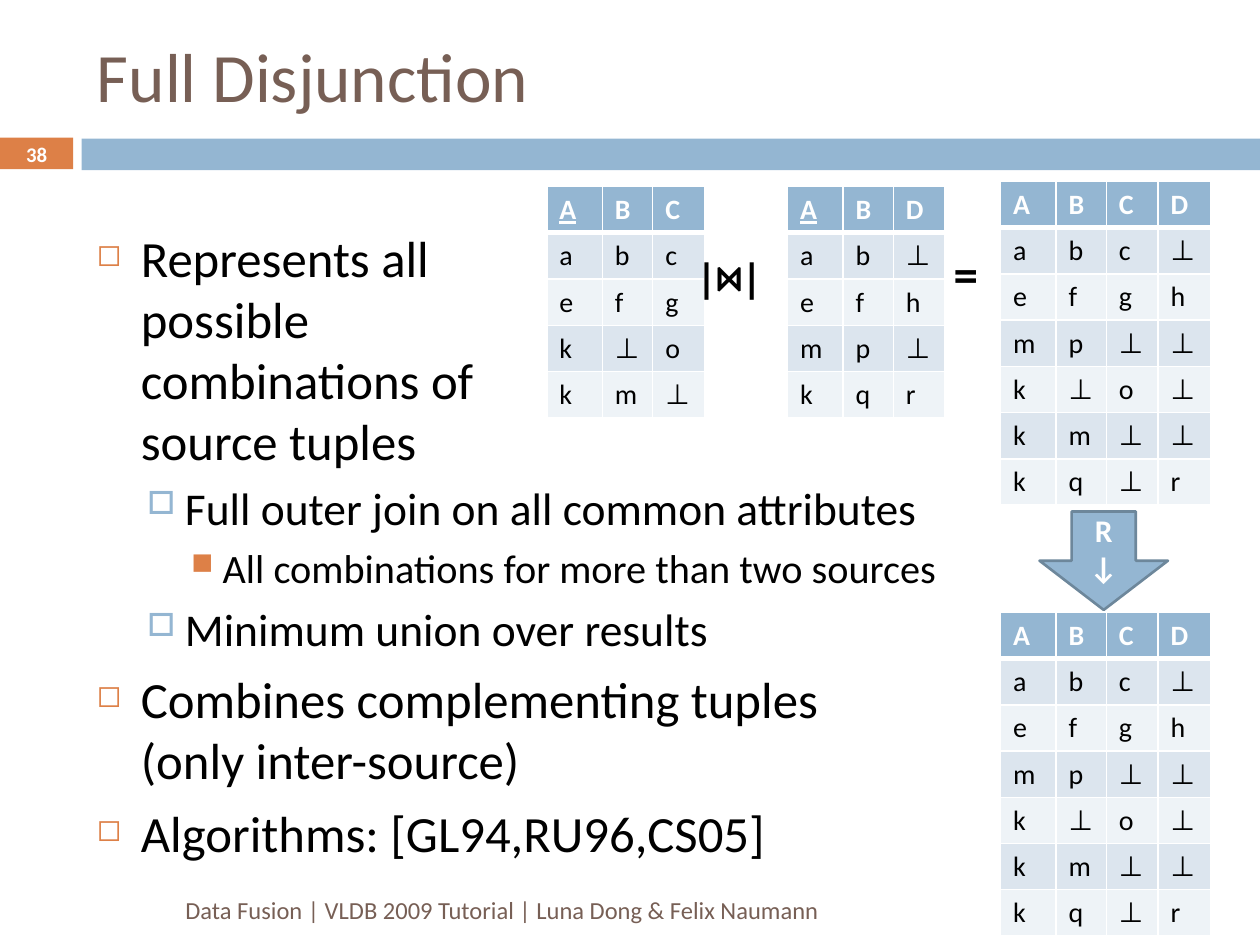
from lxml.etree import SubElement as Sub
from pptx import Presentation
from pptx.dml.color import RGBColor as RGB
from pptx.enum.shapes import MSO_SHAPE as Shape
from pptx.enum.text import MSO_ANCHOR as Anchor, MSO_AUTO_SIZE as Auto, PP_ALIGN as Align
from pptx.oxml.ns import qn
from pptx.util import Pt

HUES = {"bar": "94B6D2", "tab": "DD8047", "head": "775F55", "edge": "6D879B",
        "odd": "DCE5EE", "even": "EEF3F7", "white": "FFFFFF", "black": "000000"}
FACE = "Calibri"
WIDTHS = [31.7, 28.8, 29.5, 30.2]
ROW = 26.4
LEVELS = [dict(size=29, left=25.2, hang=21.6 + 3.6, gap=7, mark="◻", hue="tab", pct=60),
          dict(size=26, left=50.4, hang=21.6, gap=5.5, mark="□", hue="bar", pct=70),
          dict(size=23, left=72, hang=18, gap=5, mark="■", hue="tab", pct=75)]
POINTS = [(0, "Represents all\vpossible\vcombinations of\vsource tuples"),
          (1, "Full outer join on all common attributes"),
          (2, "All combinations for more than two sources"),
          (1, "Minimum union over results"),
          (0, "Combines complementing tuples\v(only inter-source)"),
          (0, "Algorithms: [GL94,RU96,CS05]")]
FIRST = ["A B C", "a b c", "e f g", "k ⊥ o", "k m ⊥"]
SECOND = ["A B D", "a b ⊥", "e f h", "m p ⊥", "k q r"]
RESULT = ["A B C D", "a b c ⊥", "e f g h", "m p ⊥ ⊥", "k ⊥ o ⊥", "k m ⊥ ⊥", "k q ⊥ r"]


def hue(name):
    """Return the named colour."""
    return RGB.from_string(HUES[name])


def style(font, size, name, bold=False):
    """Set face, size, colour and weight of a font."""
    font.name, font.size, font.bold = FACE, Pt(size), bold
    font.color.rgb = hue(name)


def block(slide, kind, box, fill, edge=None):
    """Draw a filled preset shape in the box."""
    shape = slide.shapes.add_shape(kind, *map(Pt, box))
    shape.shadow.inherit = False
    shape.fill.solid()
    shape.fill.fore_color.rgb = hue(fill)
    if edge:
        shape.line.color.rgb = hue(edge)
        shape.line.width = Pt(1.5)
    else:
        shape.line.fill.background()
    return shape


def label(slide, box, text, size, name, bold=False, align=Align.LEFT, wrap=True,
          anchor=Anchor.MIDDLE):
    """Place one line of text in the box and return its paragraph."""
    frame = slide.shapes.add_textbox(*map(Pt, box)).text_frame
    frame.word_wrap, frame.vertical_anchor = wrap, anchor
    para = frame.paragraphs[0]
    para.text, para.alignment = text, align
    style(para.font, size, name, bold)
    return para


def header(slide, left, top, width):
    """Place the title, the page tab and the colour bar."""
    title = slide.shapes.title
    title.left, title.top, title.width, title.height = map(
        Pt, (left + 48.2, top + 18, 642.2, 49.7))
    frame = title.text_frame
    frame.auto_size, frame.vertical_anchor = Auto.NONE, Anchor.MIDDLE
    para = frame.paragraphs[0]
    para.text, para.alignment = "Full Disjunction", Align.LEFT
    style(para.font, 39.6, "head")
    block(slide, Shape.RECTANGLE, (left, top + 78.7, 41.8, 18), "tab")
    block(slide, Shape.RECTANGLE, (left + 46.6, top + 79.2, width - 46.6, 18), "bar")
    label(slide, (left, top + 78.7, 41.8, 19.4), "38", 11.9, "white", True, Align.CENTER)


def outline(slide, box):
    """Write the bulleted points in the box."""
    frame = slide.shapes.add_textbox(*map(Pt, box)).text_frame
    frame.word_wrap = True
    for i, (level, text) in enumerate(POINTS):
        para = frame.add_paragraph() if i else frame.paragraphs[0]
        rule = LEVELS[level]
        para.text, para.level = text, level
        para.space_before = Pt(rule["gap"])
        style(para.font, rule["size"], "black")
        props = para._p.get_or_add_pPr()
        props.set("marL", str(Pt(rule["left"])))
        props.set("indent", str(-Pt(rule["hang"])))
        marks = [Sub(props, qn("a:buClr")),
                 Sub(props, qn("a:buSzPct"), val=str(rule["pct"] * 1000)),
                 Sub(props, qn("a:buChar"), char=rule["mark"])]
        Sub(marks[0], qn("a:srgbClr"), val=HUES[rule["hue"]])
        for mark in marks:
            props.find(qn("a:defRPr")).addprevious(mark)


def border(cell, head):
    """Give a cell white borders, thicker below the head row."""
    props = cell._tc.get_or_add_tcPr()
    for side in "LRTB":
        wide = 3 if head and side == "B" else 1
        line = Sub(props, qn("a:ln" + side), w=str(Pt(wide)))
        Sub(Sub(line, qn("a:solidFill")), qn("a:srgbClr"), val=HUES["white"])


def grid(slide, left, top, rows, key=False):
    """Build a relation from its rows, with its key underlined if asked."""
    data = [row.split() for row in rows]
    wide = WIDTHS[:len(data[0])]
    table = slide.shapes.add_table(len(data), len(wide), Pt(left), Pt(top),
                                   Pt(sum(wide)), Pt(ROW * len(data))).table
    for col, width in zip(table.columns, wide):
        col.width = Pt(width)
    for r, row in enumerate(data):
        for c, text in enumerate(row):
            cell = table.cell(r, c)
            border(cell, r == 0)
            cell.fill.solid()
            cell.fill.fore_color.rgb = hue("bar" if r == 0 else "odd" if r % 2 else "even")
            para = cell.text_frame.paragraphs[0]
            para.text = text
            style(para.font, 16, "black" if r else "white", r == 0)
            if key and r == c == 0:
                para.font.underline = True


def join(slide, left, top):
    """Show the join of two relations, its result and the reduced result."""
    grid(slide, left, top + 2.9, FIRST, True)
    grid(slide, left + 137.5, top + 2.9, SECOND, True)
    grid(slide, left + 259.2, top, RESULT)
    sign = label(slide, (left + 78.5, top + 36.7, 67, 36), "|", 24, "black", True,
                 wrap=False, anchor=Anchor.TOP)
    for text, face in (("⋈", "Courier New"), ("|", FACE)):
        run = sign.add_run()
        run.text, run.font.name = text, face
    label(slide, (left + 225.4, top + 31.7, 33.1, 41), "=", 28, "black", True,
          wrap=False, anchor=Anchor.TOP)
    arrow = block(slide, Shape.DOWN_ARROW, (left + 281.5, top + 188.6, 73.4, 56.2),
                  "bar", "edge")
    frame = arrow.text_frame
    frame.word_wrap, frame.vertical_anchor = True, Anchor.MIDDLE
    para = frame.paragraphs[0]
    para.text, para.alignment = "R↓", Align.CENTER
    style(para.font, 18, "white", True)
    grid(slide, left + 259.2, top + 246.2, RESULT)


def main():
    """Build the slide and save it."""
    deck = Presentation()
    deck.slide_width, deck.slide_height = Pt(720), Pt(540)
    slide = deck.slides.add_slide(deck.slide_layouts[5])
    header(slide, 0, 0, 720)
    outline(slide, (48.2, 126, 642.2, 354.2))
    label(slide, (48.2, 505.4, 427, 28.8),
          "Data Fusion | VLDB 2009 Tutorial | Luna Dong & Felix Naumann",
          14, "head", align=Align.RIGHT)
    join(slide, 312.5, 103.7)
    deck.save("out.pptx")


if __name__ == "__main__":
    main()
